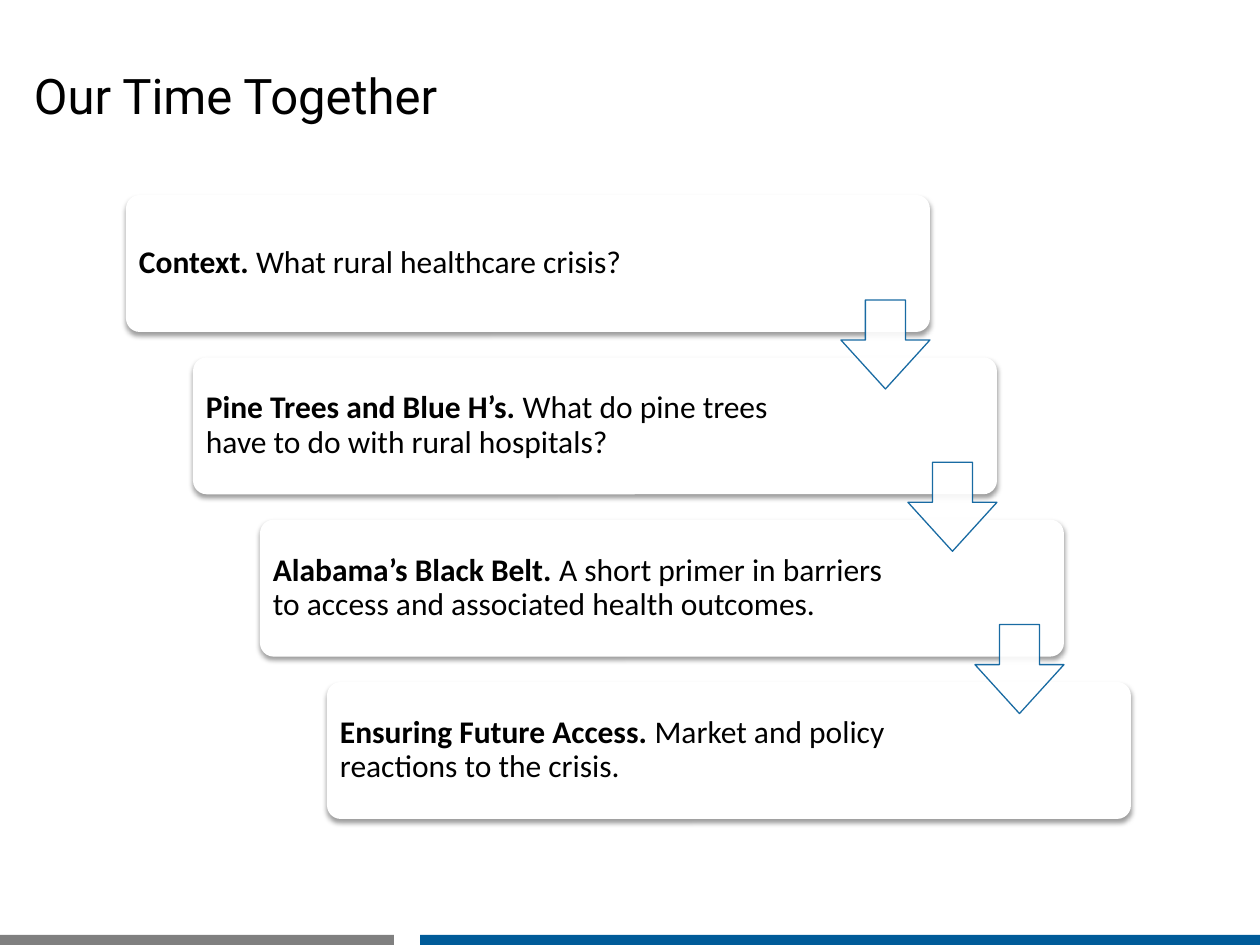
from lxml import etree
from pptx import Presentation
from pptx.dml.color import RGBColor
from pptx.enum.shapes import MSO_SHAPE
from pptx.enum.text import MSO_ANCHOR, PP_ALIGN
from pptx.oxml.ns import qn
from pptx.util import Emu, Pt

ROUNDED = MSO_SHAPE.ROUNDED_RECTANGLE
RECTANGLE = MSO_SHAPE.RECTANGLE
DOWN_ARROW = MSO_SHAPE.DOWN_ARROW
MIDDLE = MSO_ANCHOR.MIDDLE
LEFT = PP_ALIGN.LEFT

EMU_PER_PX = 914400 / 126
BLACK, WHITE, BLUE, GRAY = "000000", "FFFFFF", "005B99", "808080"
TITLE_FORMAT = {"name": "Roboto", "size": Pt(28), "bold": False}
LEAD_FORMAT = {"name": "Calibri", "size": Pt(18), "bold": True}
BODY_FORMAT = {**LEAD_FORMAT, "bold": False}

AGENDA = [
    ("Context. ", "What rural healthcare crisis?"),
    ("Pine Trees and Blue H’s. ", "What do pine trees have to do with rural hospitals?"),
    ("Alabama’s Black Belt. ",
     "A short primer in barriers to access and associated health outcomes."),
    ("Ensuring Future Access.", " Market and policy reactions to the crisis."),
]


def px(length):
    return Emu(round(length * EMU_PER_PX))


def color(value):
    return RGBColor.from_string(value)


def set_alpha(fill, percent):
    node = fill._xPr.find(qn("a:solidFill"))[0]
    etree.SubElement(node, qn("a:alpha"), val=str(percent * 1000))


def add_shadow(shape):
    effects = shape._element.spPr.find(qn("a:effectLst"))
    shadow = etree.SubElement(effects, qn("a:outerShdw"), blurRad=str(Pt(3.1)),
                              dist=str(Pt(1.6)), dir="5400000", rotWithShape="0")
    black = etree.SubElement(shadow, qn("a:srgbClr"), val=BLACK)
    etree.SubElement(black, qn("a:alpha"), val="38000")


def add_block(shapes, kind, box, fill, adjustments=()):
    shape = shapes.add_shape(kind, *map(px, box))
    shape.fill.solid()
    shape.fill.fore_color.rgb = color(fill)
    shape.line.fill.background()
    shape.shadow.inherit = False
    for index, value in enumerate(adjustments):
        shape.adjustments[index] = value
    return shape


def add_text(shapes, box, runs, insets, line_spacing=1.0):
    frame = shapes.add_textbox(*map(px, box)).text_frame
    frame.word_wrap = True
    frame.vertical_anchor = MIDDLE
    for side, inset in zip(("left", "top", "right", "bottom"), insets):
        setattr(frame, f"margin_{side}", px(inset))
    paragraph = frame.paragraphs[0]
    paragraph.alignment = LEFT
    paragraph.line_spacing = line_spacing
    for text, format_values in runs:
        run = paragraph.add_run()
        run.text = text
        for name, value in format_values.items():
            setattr(run.font, name, value)
        run.font.color.rgb = color(BLACK)


def add_card(shapes, box, lead, body):
    left, top, width, height = box
    card = add_block(shapes, ROUNDED, box, WHITE, [0.1])
    add_shadow(card)
    add_text(shapes, (left + 4, top + 4, width - 164, height - 8),
             [(lead, LEAD_FORMAT), (body, BODY_FORMAT)], (9, 9, 9, 9), 0.9)


def add_step_arrow(shapes, box):
    arrow = add_block(shapes, DOWN_ARROW, box, WHITE, [0.45, 0.55])
    arrow.line.color.rgb = color(BLUE)
    arrow.line.width = Pt(0.75)
    for fill in (arrow.fill, arrow.line.fill):
        set_alpha(fill, 90)


def add_staircase(slide, box):
    left, top, width, height = box
    card_width, card_height, arrow_size = 804, 137, 89
    steps = len(AGENDA) - 1
    step_x = (width - card_width) / steps
    step_y = (height - card_height) / steps
    shapes = slide.shapes.add_group_shape().shapes
    corners = [(left + step_x * i, top + step_y * i) for i in range(len(AGENDA))]
    for (x, y), (lead, body) in zip(corners, AGENDA):
        add_card(shapes, (x, y, card_width, card_height), lead, body)
    for x, y in corners[:-1]:
        add_step_arrow(shapes, (x + card_width - arrow_size, y + 105,
                                arrow_size, arrow_size))


def add_title(slide, box):
    add_text(slide.shapes, box, [("Our Time Together", TITLE_FORMAT)], (13, 6, 13, 6))


def add_footer(slide, box):
    left, top, width, height = box
    gray_width, blue_start = 394, 420
    add_block(slide.shapes, RECTANGLE,
              (left + blue_start, top, width - blue_start, height), BLUE)
    add_block(slide.shapes, RECTANGLE, (left, top, gray_width, height), GRAY)


def main():
    presentation = Presentation()
    presentation.slide_width, presentation.slide_height = px(1260), px(945)
    slide = presentation.slides.add_slide(presentation.slide_layouts[6])
    add_title(slide, (21, 63, 882, 63))
    add_staircase(slide, (126, 195, 1005, 624))
    add_footer(slide, (0, 935, 1260, 10))
    presentation.save("out.pptx")


if __name__ == "__main__":
    main()
